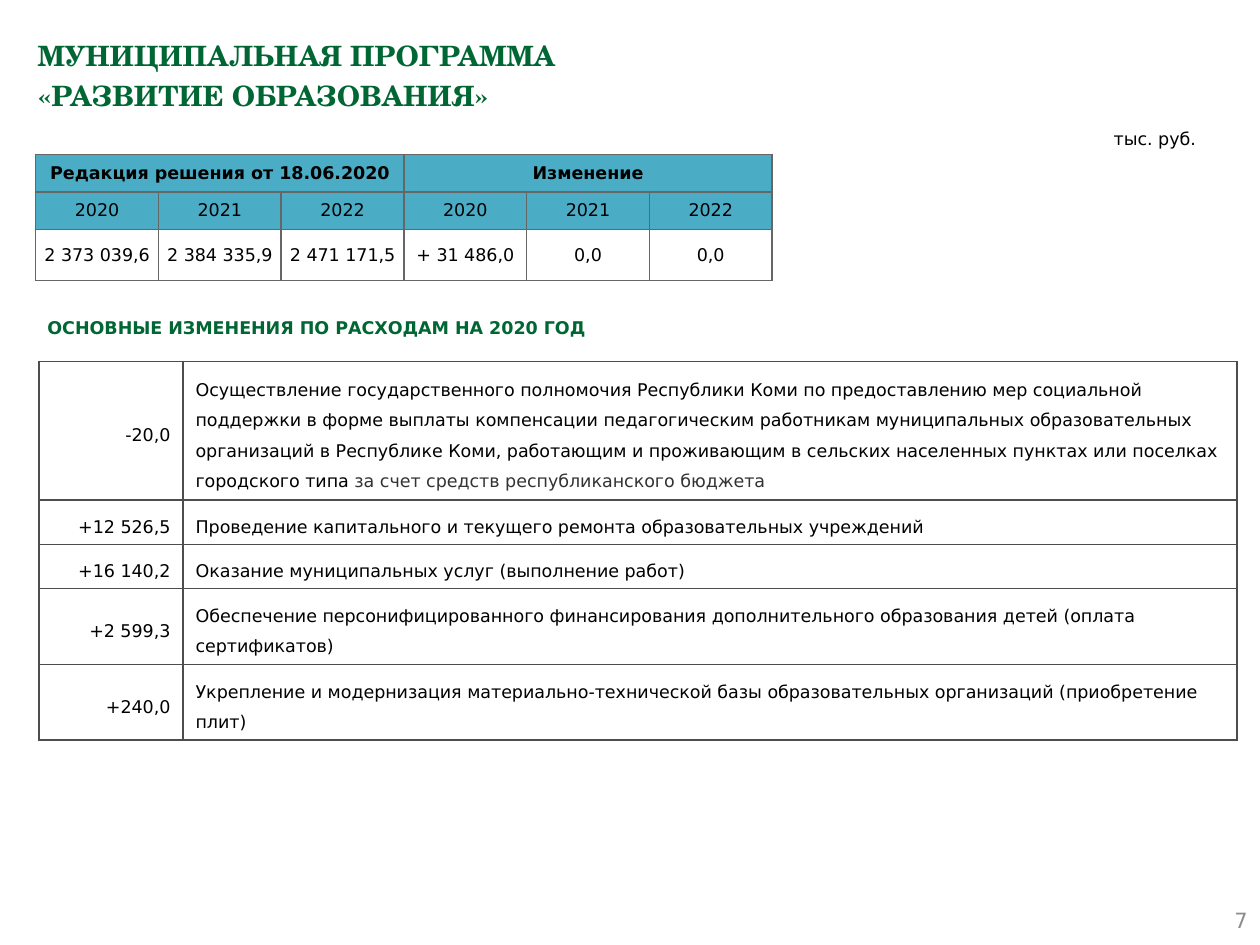
import pptx
import pptx.util
import pptx.dml.color
import pptx.enum.shapes
import pptx.enum.text
import pptx.oxml
import pptx.oxml.ns
import lxml.etree

Pt = pptx.util.Pt
ALIGN = pptx.enum.text.PP_ALIGN
MIDDLE = pptx.enum.text.MSO_ANCHOR.MIDDLE
TOP = pptx.enum.text.MSO_ANCHOR.TOP

COLORS = {
    "green": "006633", "black": "000000", "dark": "333333", "gray": "8C8C8C",
    "blue": "4BACC6", "budget": "666666", "change": "4D4D4D",
}
SANS = "DejaVu Sans"
SERIF = "TeX Gyre Schola"

TITLE = ["МУНИЦИПАЛЬНАЯ ПРОГРАММА", "«РАЗВИТИЕ ОБРАЗОВАНИЯ»"]
UNIT = "тыс. руб."
HEADING = "ОСНОВНЫЕ ИЗМЕНЕНИЯ ПО РАСХОДАМ НА 2020 ГОД"
NUMBER = "7"

GROUPS = ["Редакция решения от 18.06.2020", "Изменение"]
YEARS = ["2020", "2021", "2022"]
SUMS = ["2 373 039,6", "2 384 335,9", "2 471 171,5", "+ 31 486,0", "0,0", "0,0"]

CHANGES = [
    ("-20,0", "Осуществление государственного полномочия Республики Коми по предоставлению "
     "мер социальной поддержки в форме выплаты компенсации педагогическим работникам "
     "муниципальных образовательных организаций в Республике Коми, работающим и проживающим "
     "в сельских населенных пунктах или поселках городского типа ", 4),
    ("+12 526,5", "Проведение капитального и текущего ремонта образовательных учреждений", 1),
    ("+16 140,2", "Оказание муниципальных услуг (выполнение работ)", 1),
    ("+2 599,3", "Обеспечение персонифицированного финансирования дополнительного образования "
     "детей (оплата сертификатов)", 2),
    ("+240,0", "Укрепление и модернизация материально-технической базы образовательных "
     "организаций (приобретение плит)", 2),
]
SOURCE = "за счет средств республиканского бюджета"


def color(name):
    return pptx.dml.color.RGBColor.from_string(COLORS[name])


def write(frame, text, size=10, font=SANS, tint="black", bold=False,
          align=ALIGN.LEFT, spacing=1.0, after=0, more=False):
    frame.word_wrap = True
    para = frame.paragraphs[0]
    para.alignment = align
    para.line_spacing = spacing
    para.space_after = Pt(after)
    lines = [text] if isinstance(text, str) else text
    for i, line in enumerate(lines):
        if i:
            para.add_line_break()
        run = para.add_run()
        run.text = line
        run.font.size = Pt(size)
        run.font.name = font
        run.font.bold = bold
        run.font.color.rgb = color(tint)


def add_text(slide, box, text, anchor=TOP, **style):
    frame = slide.shapes.add_textbox(*map(Pt, box)).text_frame
    frame.vertical_anchor = anchor
    write(frame, text, **style)


def add_grid(slide, left, top, widths, heights, line):
    size = map(Pt, (left, top, sum(widths), sum(heights)))
    grid = slide.shapes.add_table(len(heights), len(widths), *size).table
    grid.first_row = grid.horz_banding = False
    for col, width in zip(grid.columns, widths):
        col.width = Pt(width)
    for row, height in zip(grid.rows, heights):
        row.height = Pt(height)
    for cell in grid.iter_cells():
        cell.vertical_anchor = MIDDLE
        props = cell._tc.get_or_add_tcPr()
        for side in ("lnL", "lnR", "lnT", "lnB"):
            props.append(pptx.oxml.parse_xml(
                f'<a:{side} {pptx.oxml.ns.nsdecls("a")} w="{Pt(1)}"><a:solidFill>'
                f'<a:srgbClr val="{COLORS[line]}"/></a:solidFill></a:{side}>'))
        cell.fill.background()
    return grid


def add_budget(slide):
    count = len(YEARS)
    grid = add_grid(slide, 20.4, 88.4, [70.15] * len(SUMS), [21.4, 21.4, 29.2], "budget")
    for cell in grid.iter_cells():
        cell.margin_left = cell.margin_right = Pt(3.6)
        cell.margin_top = cell.margin_bottom = Pt(3.6)
    for i, group in enumerate(GROUPS):
        first = grid.cell(0, i * count)
        first.merge(grid.cell(0, (i + 1) * count - 1))
        write(first.text_frame, group, bold=True, align=ALIGN.CENTER)
    for col, total in enumerate(SUMS):
        for row in (0, 1):
            fill = grid.cell(row, col).fill
            fill.solid()
            fill.fore_color.rgb = color("blue")
        write(grid.cell(1, col).text_frame, YEARS[col % count], align=ALIGN.CENTER)
        write(grid.cell(2, col).text_frame, total, align=ALIGN.CENTER)


def add_changes(slide):
    heights = [7.3 + 17.4 * lines for _, _, lines in CHANGES]
    grid = add_grid(slide, 22.4, 206.5, [82.2, 602.4], heights, "change")
    for row, (total, text, _) in enumerate(CHANGES):
        write(grid.cell(row, 0).text_frame, total, align=ALIGN.RIGHT, spacing=1.5, after=10)
        write(grid.cell(row, 1).text_frame, text, spacing=1.5, after=10)
    write(grid.cell(0, 1).text_frame, SOURCE, tint="dark", spacing=1.5, after=10)


def add_heading(slide):
    kind = pptx.enum.shapes.MSO_SHAPE.PENTAGON
    shape = slide.shapes.add_shape(kind, Pt(20), Pt(171.4), Pt(383), Pt(31))
    shape.adjustments[0] = 0
    shape.shadow.inherit = False
    shape.fill.background()
    shape.line.fill.background()
    shape.text_frame.vertical_anchor = MIDDLE
    write(shape.text_frame, HEADING, tint="green", bold=True)


def main():
    deck = pptx.Presentation()
    deck.slide_width, deck.slide_height = Pt(720), Pt(540)
    slide = deck.slides.add_slide(deck.slide_layouts[6])
    add_text(slide, (14.4, 14.4, 692, 57), TITLE, size=16, font=SERIF,
             tint="green", bold=True, spacing=1.2)
    add_text(slide, (552, 511.2, 168, 28.8), NUMBER, anchor=MIDDLE, size=12,
             tint="gray", align=ALIGN.RIGHT)
    add_heading(slide)
    add_changes(slide)
    add_text(slide, (629.3, 67, 72.7, 21.6), UNIT, spacing=1.2)
    add_budget(slide)
    deck.save("out.pptx")


if __name__ == "__main__":
    main()
